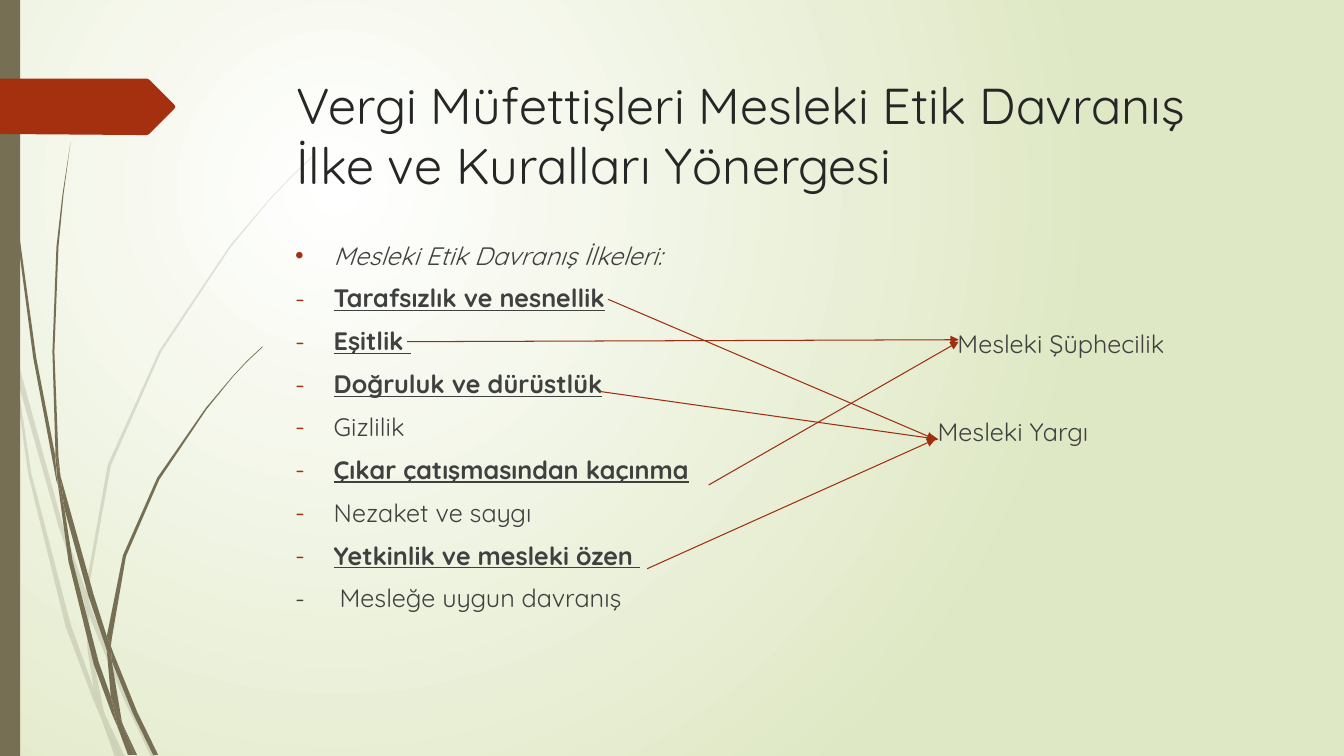
import pptx
import pptx.dml.color
import pptx.enum.dml
import pptx.enum.shapes
import pptx.enum.text
import pptx.oxml
import pptx.oxml.ns
import pptx.util
from dataclasses import dataclass
from lxml import etree

Cm = pptx.util.Cm
Pt = pptx.util.Pt
qn = pptx.oxml.ns.qn


@dataclass(frozen=True)
class Theme:
    font: str = "Quicksand"
    title_size: int = 36
    body_size: int = 18
    space_before: int = 9
    title: str = "262626"
    text: str = "404040"
    accent: str = "A53010"
    arrow: str = "9E2E0F"
    olive: str = "766F54"
    glow: str = "FFFFFF"
    meadow: str = "DFE8C4"


def rgb(code):
    return pptx.dml.color.RGBColor.from_string(code)


class SlideBuilder:
    OUTLINE_UNIT = Cm(0.0254)  # outlines are drawn on a grid of this step

    def __init__(self, page, theme):
        self.page = page
        self.theme = theme

    def background(self):
        """Radial glow centred in the upper left quarter."""
        fill = self.page.background.fill
        fill.gradient()
        for stop, code in zip(fill.gradient_stops, (self.theme.glow, self.theme.meadow)):
            stop.color.rgb = rgb(code)
        fill.gradient_stops[0].position = 0
        fill.gradient_stops[1].position = 1
        linear = next(self.page.element.iter(qn("a:lin")))
        radial = etree.Element(qn("a:path"), path="circle")
        etree.SubElement(radial, qn("a:fillToRect"), l="50000", t="50000", r="100000", b="100000")
        linear.getparent().replace(linear, radial)

    def paint(self, shape, code, opacity=100):
        shape.shadow.inherit = False
        shape.fill.solid()
        shape.fill.fore_color.rgb = rgb(code)
        shape.line.fill.background()
        if opacity < 100:
            color = next(shape.element.spPr.iter(qn("a:srgbClr")))
            etree.SubElement(color, qn("a:alpha"), val=str(opacity * 1000))
        return shape

    def outline(self, points, code, opacity=100):
        builder = self.page.shapes.build_freeform(*points[0], scale=self.OUTLINE_UNIT)
        builder.add_line_segments(points[1:], close=True)
        return self.paint(builder.convert_to_shape(), code, opacity)

    def grass(self, pieces, opacity):
        blades = [self.outline(points, self.theme.olive, opacity) for points in pieces]
        self.page.shapes.add_group_shape(blades)

    def bar(self, left, top, width, height):
        kind = pptx.enum.shapes.MSO_SHAPE.RECTANGLE
        box = self.page.shapes.add_shape(kind, Cm(left), Cm(top), Cm(width), Cm(height))
        self.paint(box, self.theme.olive)

    def format_frame(self, box, size, code):
        frame = box.text_frame
        frame.word_wrap = True
        frame.auto_size = pptx.enum.text.MSO_AUTO_SIZE.NONE
        frame.vertical_anchor = pptx.enum.text.MSO_ANCHOR.TOP
        for para in frame.paragraphs:
            para.alignment = pptx.enum.text.PP_ALIGN.LEFT
            for span in para.runs:
                span.font.name = self.theme.font
                span.font.size = Pt(size)
                span.font.color.rgb = rgb(code)

    def title(self, text, left, top, width, height):
        box = self.page.shapes.title
        box.left, box.top, box.width, box.height = map(Cm, (left, top, width, height))
        box.text_frame.text = text
        self.format_frame(box, self.theme.title_size, self.theme.title)
        box.element.getparent().append(box.element)  # in front of the grass

    def text(self, text, left, top, width, height):
        box = self.page.shapes.add_textbox(Cm(left), Cm(top), Cm(width), Cm(height))
        box.text_frame.text = text
        self.format_frame(box, self.theme.body_size, self.theme.text)
        return box

    def bullet(self, para, mark, code, indent):
        props = para._p.get_or_add_pPr()
        props.set("marL", str(Cm(indent)))
        props.set("indent", str(-Cm(indent)))
        color = etree.SubElement(props, qn("a:buClr"))
        etree.SubElement(color, qn("a:srgbClr"), val=code)
        etree.SubElement(props, qn("a:buFont"), typeface=self.theme.font)
        etree.SubElement(props, qn("a:buChar"), char=mark)

    def principles(self, heading, items, left, top, width, height):
        """Bulleted list; items are (text, stressed), the last one has a plain dash."""
        lines = [heading] + [text for text, stressed in items]
        box = self.text("\n".join(lines), left, top, width, height)
        first, *others = box.text_frame.paragraphs
        for para in box.text_frame.paragraphs:
            para.space_before = Pt(self.theme.space_before)
        self.bullet(first, "•", self.theme.accent, 0.97)
        first.runs[0].font.italic = True
        for para, (text, stressed) in zip(others, items):
            para.runs[0].font.bold = stressed
            para.runs[0].font.underline = stressed
        for para in others[:-1]:
            self.bullet(para, "-", self.theme.accent, 0.97)
        self.bullet(others[-1], "-", self.theme.text, 1.12)

    def arrow(self, start, end):
        kind = pptx.enum.shapes.MSO_CONNECTOR.STRAIGHT
        line = self.page.shapes.add_connector(kind, *map(Cm, start + end))
        line.line.color.rgb = rgb(self.theme.arrow)
        line.line.width = Pt(0.75)
        etree.SubElement(line.line._get_or_add_ln(), qn("a:tailEnd"), type="triangle")
        etree.SubElement(line.element.spPr, qn("a:effectLst"))


PALE_GRASS = [
    [(11, 350), (9, 322), (0, 282), (0, 299), (10, 344)],
    [(58, 522), (84, 599), (85, 586), (62, 520), (14, 345), (17, 376)],
    [(92, 607), (88, 596), (88, 610), (123, 694), (150, 751), (155, 751), (127, 692)],
    [(119, 751), (124, 751), (105, 711)],
    [(93, 683), (70, 619), (31, 469), (17, 376), (11, 350), (28, 470), (65, 621), (92, 693),
     (101, 714), (99, 707)],
    [(84, 599), (87, 646), (93, 683), (96, 692), (105, 711), (103, 706), (91, 646), (88, 610),
     (88, 608)],
    [(88, 584), (110, 462), (160, 349), (229, 245), (268, 198), (290, 175), (312, 154), (312, 153),
     (289, 175), (268, 197), (228, 244), (158, 348), (107, 461), (85, 584), (85, 586), (88, 596)],
    [(101, 714), (114, 751), (119, 751)],
    [(88, 608), (88, 610), (88, 596), (85, 586), (84, 599)],
    [(96, 692), (93, 683), (99, 707), (101, 714), (119, 751), (105, 711)],
]
DARK_GRASS = [
    [(7, 110), (17, 233), (33, 355), (56, 477), (57, 481), (55, 457), (55, 453), (36, 355),
     (19, 232), (8, 109), (5, 48), (4, 0), (3, 0), (4, 48)],
    [(88, 592), (106, 645), (106, 633), (106, 631), (93, 590), (60, 472), (64, 505)],
    [(113, 649), (110, 641), (111, 656), (132, 708), (152, 749), (157, 749), (136, 706)],
    [(110, 691), (98, 657), (72, 556), (64, 505), (57, 477), (68, 557), (93, 659), (111, 708),
     (117, 722), (116, 717)],
    [(60, 472), (58, 453), (54, 349), (58, 245), (63, 193), (70, 141), (62, 193), (56, 245),
     (52, 349), (55, 449)],
    [(133, 749), (136, 749), (122, 719)],
    [(57, 477), (64, 505), (60, 472), (55, 449), (55, 453)],
    [(111, 633), (125, 552), (158, 476), (205, 406), (231, 374), (245, 359), (261, 344), (260, 344),
     (245, 358), (231, 373), (204, 405), (156, 474), (122, 551), (106, 631), (110, 641)],
    [(117, 722), (127, 749), (131, 749)],
    [(106, 645), (110, 691), (116, 706), (122, 719), (121, 716), (111, 656), (109, 651)],
    [(106, 645), (109, 651), (111, 656), (110, 641), (106, 631), (106, 633)],
    [(116, 706), (110, 691), (116, 717), (117, 722), (130, 749), (133, 749), (122, 719)],
]
FLAG = [(0, 78), (146, 78), (148, 79), (173, 104), (174, 106), (173, 108), (148, 133), (146, 134),
        (136, 134), (0, 133)]

PRINCIPLES = [
    ("Tarafsızlık ve nesnellik", True),
    ("Eşitlik ", True),
    ("Doğruluk ve dürüstlük", True),
    ("Gizlilik", False),
    ("Çıkar çatışmasından kaçınma", True),
    ("Nezaket ve saygı", False),
    ("Yetkinlik ve mesleki özen ", True),
    ("Mesleğe uygun davranış", False),
]
LIST_TOP, ROW_PITCH = 5.92, 1.11
OUTCOMES = [("Mesleki Şüphecilik", 23.88, 2), ("Mesleki Yargı", 23.38, 4)]
ARROWS = [
    ((10.26, 8.61), (24.16, 8.56)),
    ((17.86, 12.22), (24.16, 8.61)),
    ((15.32, 7.54), (23.57, 11.07)),
    ((15.09, 9.86), (23.65, 11.07)),
    ((16.31, 14.33), (23.57, 11.07)),
]


def main():
    deck = pptx.Presentation()
    deck.slide_width, deck.slide_height = Cm(33.87), Cm(19.05)
    theme = Theme()
    slide = SlideBuilder(deck.slides.add_slide(deck.slide_layouts[5]), theme)
    slide.background()
    slide.grass(PALE_GRASS, 20)
    slide.grass(DARK_GRASS, 100)
    slide.bar(0, 0, 0.51, 19.05)
    slide.outline(FLAG, theme.accent)
    slide.title("Vergi Müfettişleri Mesleki Etik Davranış İlke ve Kuralları Yönergesi",
                7.21, 1.73, 24.77, 3.56)
    slide.principles("Mesleki Etik Davranış İlkeleri:", PRINCIPLES, 7.19, LIST_TOP, 24.77, 10.49)
    for text, left, row in OUTCOMES:
        slide.text(text, left, LIST_TOP + row * ROW_PITCH, 7, 1.1)
    for start, end in ARROWS:
        slide.arrow(start, end)
    deck.save("out.pptx")


if __name__ == "__main__":
    main()
